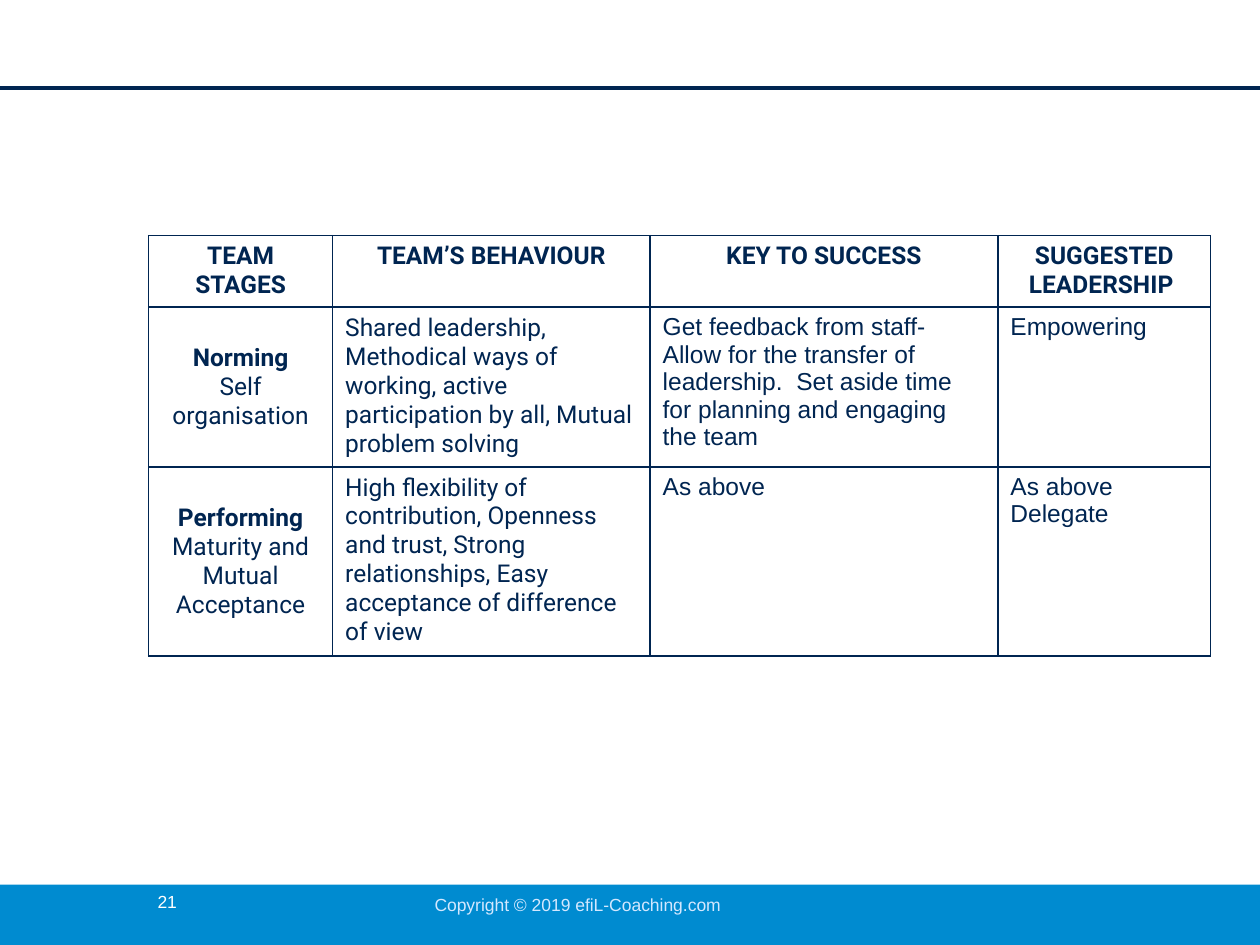
from dataclasses import dataclass

from lxml import etree
from pptx import Presentation
from pptx.dml.color import RGBColor
from pptx.enum import shapes, text
from pptx.oxml import ns
from pptx.util import Inches, Pt


@dataclass(frozen=True)
class Theme:
    navy: str = "002551"
    blue: str = "008BD0"
    pale: str = "D4E8FF"
    white: str = "FFFFFF"
    heading_font: str = "Roboto"
    body_font: str = "Arial"
    table_size: float = 14
    footer_size: float = 10
    rule_width: float = 2.5
    border_width: float = 1


THEME = Theme()
CENTER = text.PP_ALIGN.CENTER

COLUMN_WIDTHS = (1.46, 2.52, 2.76, 1.69)
ROW_HEIGHT = 0.41
HEADINGS = ("TEAM STAGES", "TEAM’S BEHAVIOUR", "KEY TO SUCCESS", "SUGGESTED LEADERSHIP ")
STAGES = (
    (
        ("Norming", "Self organisation"),
        "Shared leadership, Methodical ways of working, active participation by all, "
        "Mutual problem solving",
        "Get feedback from staff- Allow for the transfer of leadership.  "
        "Set aside time for planning and engaging the team",
        ("Empowering",),
    ),
    (
        ("Performing", "Maturity and Mutual Acceptance"),
        "High flexibility of contribution, Openness and trust, Strong relationships, "
        "Easy acceptance of difference of view",
        "As above",
        ("As above", "Delegate"),
    ),
)


def write(frame, *lines, font=THEME.body_font, size=THEME.table_size, color=THEME.navy,
          bold=False, bold_first=False, align=text.PP_ALIGN.LEFT):
    """Write one paragraph per line, all in the same format."""
    for index, line in enumerate(lines):
        paragraph = frame.add_paragraph() if index else frame.paragraphs[0]
        paragraph.alignment = align
        run = paragraph.add_run()
        run.text = line
        run.font.name = font
        run.font.size = Pt(size)
        run.font.bold = bold or (bold_first and index == 0)
        run.font.color.rgb = RGBColor.from_string(color)


def add_borders(cell):
    properties = cell._tc.get_or_add_tcPr()
    for position, side in enumerate(("lnL", "lnR", "lnT", "lnB")):
        border = etree.Element(ns.qn(f"a:{side}"), w=str(Pt(THEME.border_width)))
        fill = etree.SubElement(border, ns.qn("a:solidFill"))
        etree.SubElement(fill, ns.qn("a:srgbClr"), val=THEME.navy)
        properties.insert(position, border)


def add_header_rule(slide, left, top, width):
    rule = slide.shapes.add_connector(
        shapes.MSO_CONNECTOR.STRAIGHT,
        Inches(left), Inches(top), Inches(left + width), Inches(top))
    rule.line.color.rgb = RGBColor.from_string(THEME.navy)
    rule.line.width = Pt(THEME.rule_width)
    etree.SubElement(rule._element.spPr, ns.qn("a:effectLst"))


def add_stage_table(slide, left, top, width, height):
    holder = slide.shapes.add_table(
        len(STAGES) + 1, len(HEADINGS),
        Inches(left), Inches(top), Inches(width), Inches(height))
    table = holder.table
    for column, column_width in zip(table.columns, COLUMN_WIDTHS):
        column.width = Inches(column_width)
    for row in table.rows:
        row.height = Inches(ROW_HEIGHT)
    holder.height = Inches(height)

    for cell in table.iter_cells():
        cell.fill.background()
        add_borders(cell)

    roboto = THEME.heading_font
    for column, heading in enumerate(HEADINGS):
        write(table.cell(0, column).text_frame, heading, font=roboto, bold=True, align=CENTER)
    for row, (stage, behaviour, key, leadership) in enumerate(STAGES, start=1):
        stage_cell = table.cell(row, 0)
        stage_cell.vertical_anchor = text.MSO_ANCHOR.MIDDLE
        write(stage_cell.text_frame, *stage, font=roboto, bold_first=True, align=CENTER)
        write(table.cell(row, 1).text_frame, behaviour, font=roboto)
        write(table.cell(row, 2).text_frame, key)
        write(table.cell(row, 3).text_frame, *leadership)


def add_footer(slide, left, top, width, height):
    band = slide.shapes.add_shape(
        shapes.MSO_SHAPE.RECTANGLE,
        Inches(left), Inches(top), Inches(width), Inches(height))
    band.shadow.inherit = False
    band.fill.solid()
    band.fill.fore_color.rgb = RGBColor.from_string(THEME.blue)
    band.line.fill.background()

    number = slide.shapes.add_textbox(
        Inches(left + 1.2), Inches(top), Inches(0.51), Inches(0.35)).text_frame
    number.word_wrap = True
    number.margin_left = number.margin_right = Inches(0.05)
    number.margin_top = number.margin_bottom = Inches(0.05)
    write(number, "21", size=THEME.footer_size, color=THEME.white)

    notice = slide.shapes.add_textbox(
        Inches(left + 3.35), Inches(top + 0.03), Inches(2.49), Inches(0.27)).text_frame
    notice.word_wrap = False
    notice.auto_size = text.MSO_AUTO_SIZE.SHAPE_TO_FIT_TEXT
    write(notice, "Copyright © 2019 efiL-Coaching.com", size=THEME.footer_size, color=THEME.pale)


def main():
    deck = Presentation()
    deck.slide_width, deck.slide_height = Inches(10), Inches(7.5)
    slide = deck.slides.add_slide(deck.slide_layouts[6])
    add_footer(slide, 0, 7.02, 10, 0.48)
    add_header_rule(slide, 0, 0.7, 10)
    add_stage_table(slide, 1.18, 1.87, sum(COLUMN_WIDTHS), 3.33)
    deck.save("out.pptx")


if __name__ == "__main__":
    main()
